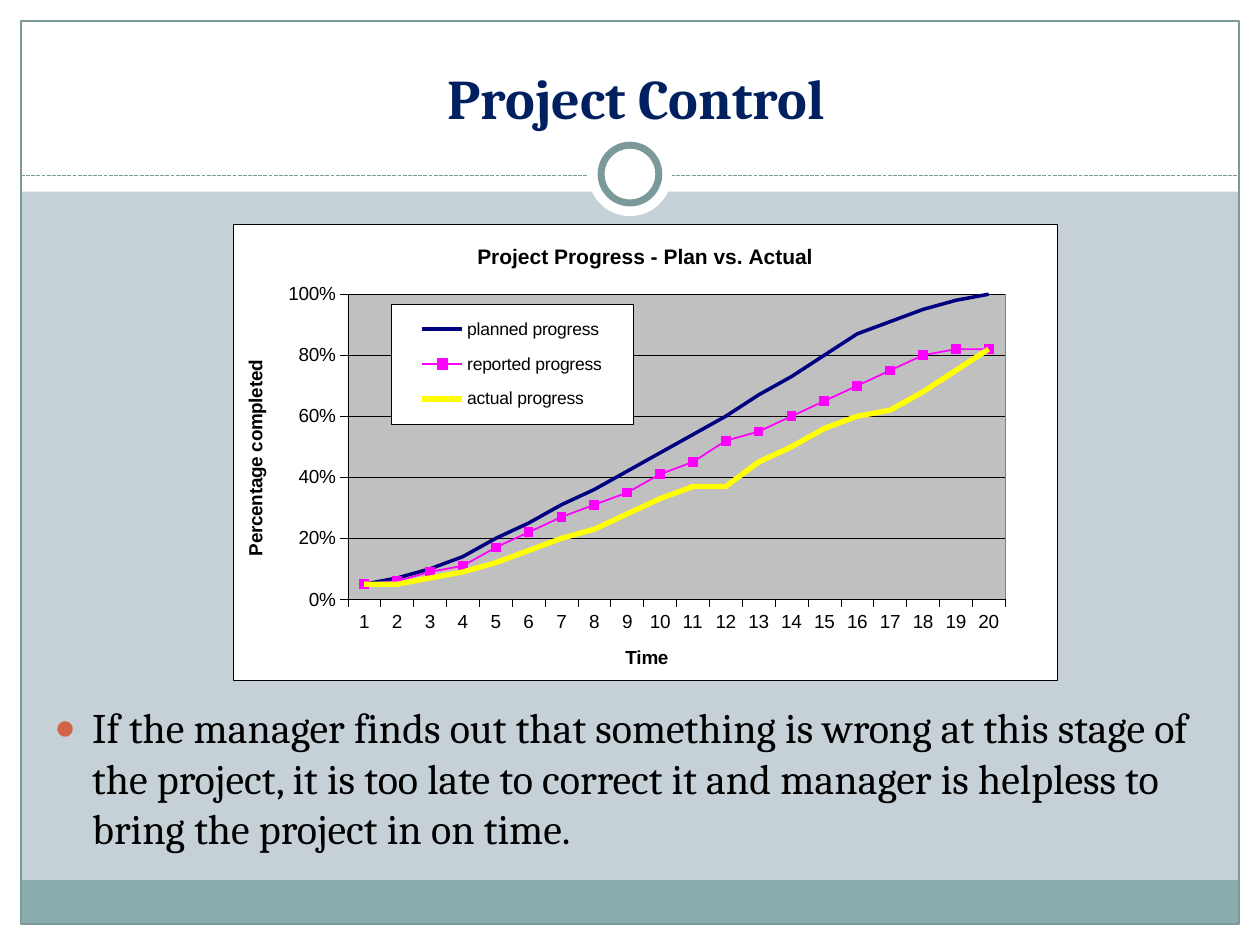
from lxml import etree
from pptx import Presentation
from pptx.chart.data import CategoryChartData
from pptx.dml.color import RGBColor
from pptx.enum.chart import XL_CHART_TYPE as ChartType, XL_LEGEND_POSITION as LegendPosition
from pptx.enum.chart import XL_MARKER_STYLE as MarkerStyle, XL_TICK_MARK as TickMark
from pptx.enum.dml import MSO_LINE_DASH_STYLE as Dash
from pptx.enum.shapes import MSO_CONNECTOR as Connector, MSO_SHAPE as Shape
from pptx.enum.text import MSO_ANCHOR as Anchor, PP_ALIGN as Align
from pptx.oxml import parse_xml
from pptx.oxml.ns import nsdecls, qn
from pptx.util import Pt

COLORS = {name: RGBColor.from_string(value) for name, value in {
    "background": "C5D1D7", "white": "FFFFFF", "black": "000000",
    "band": "8CADAE", "frame": "7C999A", "title": "002060",
    "plot": "C0C0C0", "plot_edge": "808080",
    "planned": "000080", "reported": "FF00FF", "actual": "FFFF00",
}.items()}


def add_decoration(kind, left, top, width, height, fill=None, line_width=None):
    shape = slide.shapes.add_shape(kind, Pt(left), Pt(top), Pt(width), Pt(height))
    shape.shadow.inherit = False
    if fill:
        shape.fill.solid()
        shape.fill.fore_color.rgb = COLORS[fill]
    else:
        shape.fill.background()
    if line_width:
        shape.line.color.rgb = COLORS["frame"]
        shape.line.width = Pt(line_width)
    else:
        shape.line.fill.background()


def area_format(fill, line):
    return parse_xml(
        f'<c:spPr {nsdecls("c", "a")}><a:solidFill><a:srgbClr val="{COLORS[fill]}"/></a:solidFill>'
        f'<a:ln w="{Pt(0.25)}"><a:solidFill><a:srgbClr val="{COLORS[line]}"/></a:solidFill></a:ln></c:spPr>')


presentation = Presentation()
presentation.slide_width, presentation.slide_height = Pt(720), Pt(540)
slide = presentation.slides.add_slide(presentation.slide_layouts[6])
slide.background.fill.solid()
slide.background.fill.fore_color.rgb = COLORS["background"]

# Margins, footer band and frame
for left, top, width, height in [(0, 528, 720, 12), (0, 0, 720, 109.5),
                                 (0, 0, 12, 540), (708, 0, 12, 540)]:
    add_decoration(Shape.RECTANGLE, left, top, width, height, "white")
add_decoration(Shape.RECTANGLE, 12, 503, 696, 25, "band")
add_decoration(Shape.RECTANGLE, 12, 12, 696, 516, line_width=0.75)

# Dashed divider with a ring in the middle
divider = slide.shapes.add_connector(Connector.STRAIGHT, Pt(12), Pt(100.5), Pt(708), Pt(100.5))
divider.line.color.rgb = COLORS["frame"]
divider.line.width = Pt(0.75)
divider.line.dash_style = Dash.SQUARE_DOT
etree.SubElement(divider.element.spPr, qn("a:effectLst"))
add_decoration(Shape.OVAL, 336, 75.5, 48, 48, "white")
add_decoration(Shape.OVAL, 343.5, 83, 33, 33, "white", line_width=4)

# Title and bullet text
texts = [
    (" Project Control", 18, 672, 60, 32, True, "title", Align.CENTER, Anchor.BOTTOM),
    ("If the manager finds out that something is wrong at this stage of the project, "
     "it is too late to correct it and manager is helpless to bring the project in on time.",
     397.5, 677, 96, 24, False, "black", Align.LEFT, Anchor.TOP),
]
for text, top, width, height, size, bold, color, alignment, anchor in texts:
    text_frame = slide.shapes.add_textbox(Pt(24), Pt(top), Pt(width), Pt(height)).text_frame
    text_frame.word_wrap = True
    text_frame.vertical_anchor = anchor
    text_frame.text = text
    paragraph = text_frame.paragraphs[0]
    paragraph.alignment = alignment
    font = paragraph.runs[0].font
    font.name, font.size, font.bold = "Cambria", Pt(size), bold
    font.color.rgb = COLORS[color]

# The last paragraph is the bulleted one
properties = paragraph._p.get_or_add_pPr()
properties.set("marL", str(Pt(21.6)))
properties.set("indent", str(-Pt(21.6)))
for bullet in ('<a:buClr {}><a:srgbClr val="D16349"/></a:buClr>', '<a:buSzPct {} val="85000"/>',
               '<a:buFont {} typeface="Arial"/>', '<a:buChar {} char="●"/>'):
    properties.append(parse_xml(bullet.format(nsdecls("a"))))

# Progress chart: name, colour, line width, percentages
progress = [
    ("planned progress", "planned", 2,
     [5, 7, 10, 14, 20, 25, 31, 36, 42, 48, 54, 60, 67, 73, 80, 87, 91, 95, 98, 100]),
    ("reported progress", "reported", 1,
     [5, 6, 9, 11, 17, 22, 27, 31, 35, 41, 45, 52, 55, 60, 65, 70, 75, 80, 82, 82]),
    ("actual progress", "actual", 3,
     [5, 5, 7, 9, 12, 16, 20, 23, 28, 33, 37, 37, 45, 50, 56, 60, 62, 68, 75, 82]),
]
chart_data = CategoryChartData(number_format="0%")
chart_data.categories = [str(period) for period in range(1, 21)]
for name, color, width, percentages in progress:
    chart_data.add_series(name, [percentage / 100 for percentage in percentages])
chart = slide.shapes.add_chart(ChartType.LINE_MARKERS, Pt(133.2), Pt(128.2), Pt(471), Pt(260.6),
                               chart_data).chart
chart.font.name, chart.font.size = "Arial", Pt(9)
chart.font.color.rgb = COLORS["black"]
chart.plots[0].vary_by_categories = False

for series, (name, color, width, percentages) in zip(chart.plots[0].series, progress):
    series.smooth = False
    series.format.line.color.rgb = COLORS[color]
    series.format.line.width = Pt(width)
    series.marker.style = MarkerStyle.NONE
    if color == "reported":
        series.marker.style = MarkerStyle.SQUARE
        series.marker.size = 5
        series.marker.format.fill.solid()
        series.marker.format.fill.fore_color.rgb = COLORS[color]
        series.marker.format.line.color.rgb = COLORS[color]

# Axes and titles
category_axis, value_axis = chart.category_axis, chart.value_axis
value_axis.minimum_scale, value_axis.maximum_scale, value_axis.major_unit = 0, 1, 0.2
value_axis.has_major_gridlines = True
value_axis.tick_labels.number_format = "0%"
value_axis.tick_labels.number_format_is_linked = False
for axis in (category_axis, value_axis):
    axis.major_tick_mark = TickMark.OUTSIDE
    axis.tick_labels.font.name, axis.tick_labels.font.size = "Arial", Pt(10.8)
    axis.tick_labels.font.color.rgb = COLORS["black"]
for line in (category_axis.format.line, value_axis.format.line, value_axis.major_gridlines.format.line):
    line.color.rgb = COLORS["black"]
    line.width = Pt(0.25)
for title, text, size in [(chart.chart_title, "Project Progress - Plan vs. Actual", 12),
                          (category_axis.axis_title, "Time", 10.8),
                          (value_axis.axis_title, "Percentage completed", 10.8)]:
    title.text_frame.text = text
    font = title.text_frame.paragraphs[0].runs[0].font
    font.name, font.size, font.bold = "Arial", Pt(size), True
    font.color.rgb = COLORS["black"]
value_axis.axis_title.text_frame._txBody.bodyPr.set("rot", "-5400000")

# Legend inside the plot
chart.has_legend = True
legend = chart.legend
legend.position = LegendPosition.RIGHT
legend.include_in_layout = False
legend.font.name, legend.font.size = "Arial", Pt(10)
legend.font.color.rgb = COLORS["black"]

# Fixed places and fills of plot and legend
chart_space = chart._chartSpace
plot_area = chart_space.chart.plotArea
legend_element = legend._element
for parent, index, target, place in [
        (plot_area, 0, '<c:layoutTarget val="inner"/>', (0.139, 0.153, 0.798, 0.67)),
        (legend_element, 1, "", (0.192, 0.175, 0.293, 0.263))]:
    for old_layout in parent.findall(qn("c:layout")):
        parent.remove(old_layout)
    modes = '<c:xMode val="edge"/><c:yMode val="edge"/>'
    sizes = "".join(f'<c:{key} val="{value}"/>' for key, value in zip("xywh", place))
    parent.insert(index, parse_xml(f'<c:layout {nsdecls("c")}><c:manualLayout>{target}{modes}{sizes}'
                                   '</c:manualLayout></c:layout>'))
plot_area.append(area_format("plot", "plot_edge"))
legend_element.find(qn("c:overlay")).addnext(area_format("white", "black"))
chart_space.chart.addnext(area_format("white", "black"))

presentation.save("out.pptx")
